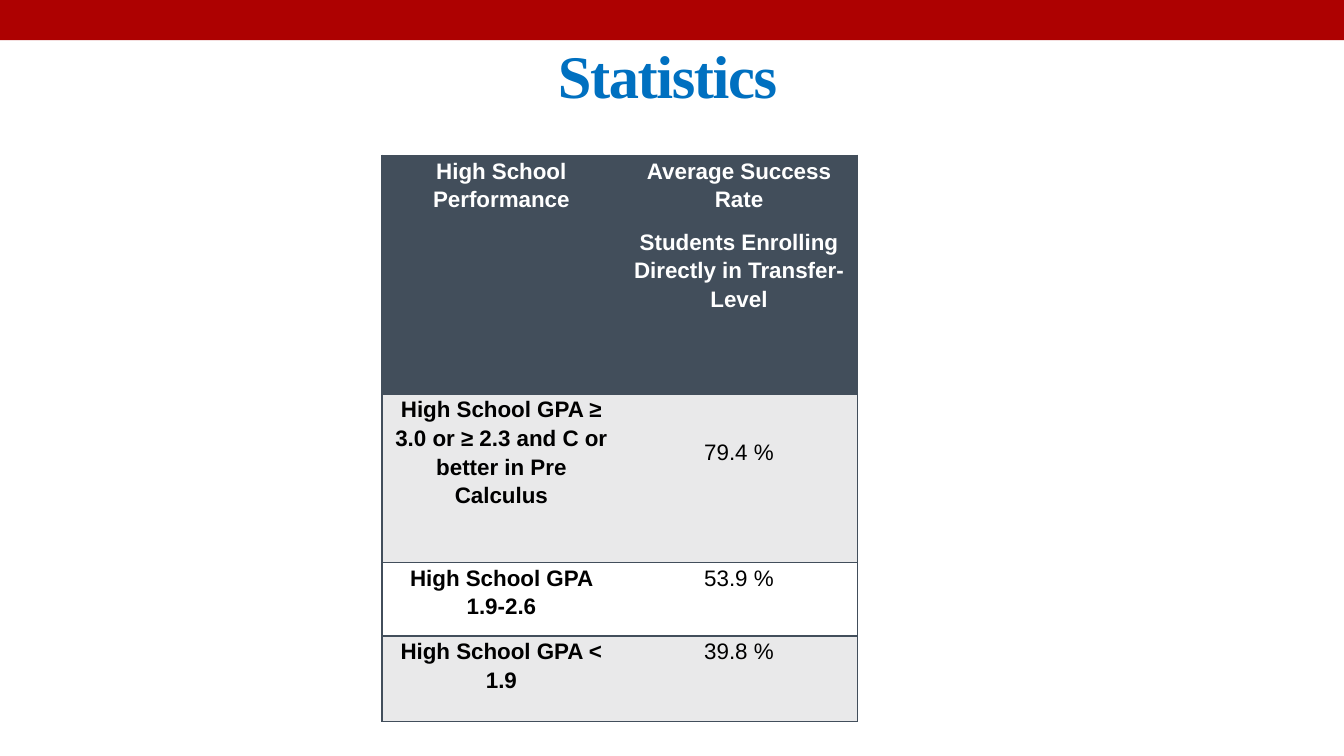
from pptx import Presentation
from pptx.dml.color import RGBColor
from pptx.enum.shapes import MSO_SHAPE
from pptx.enum.text import MSO_ANCHOR, PP_ALIGN
from pptx.oxml import parse_xml
from pptx.oxml.ns import nsdecls
from pptx.util import Pt

THEME = {
    "band": "AD0101", "title": "0070C0", "head": "424E5B",
    "gray": "E9E9EA", "white": "FFFFFF", "black": "000000",
    "serif": "Times New Roman", "sans": "Arial",
    "big": 43.2, "body": 16,
}


def style(par, font, size, color, bold):
    par.alignment = PP_ALIGN.CENTER
    for run in par.runs:
        run.font.name = font
        run.font.size = Pt(size)
        run.font.bold = bold
        run.font.color.rgb = RGBColor.from_string(color)


def border(cell, sides):
    # Edges go ahead of the fill, in schema order
    props = cell._tc.get_or_add_tcPr()
    for spot, side in enumerate("LRTB"):
        paint = "<a:noFill/>"
        if side in sides:
            paint = f'<a:solidFill><a:srgbClr val="{THEME["head"]}"/></a:solidFill>'
        props.insert(spot, parse_xml(
            f'<a:ln{side} {nsdecls("a")} w="{Pt(1)}">{paint}</a:ln{side}>'))


deck = Presentation()
deck.slide_width, deck.slide_height = Pt(960), Pt(540)
slide = deck.slides.add_slide(deck.slide_layouts[6])

# Top band
band = slide.shapes.add_shape(MSO_SHAPE.RECTANGLE, 0, 0, Pt(960), Pt(28.8))
band.shadow.inherit = False
band.fill.solid()
band.fill.fore_color.rgb = RGBColor.from_string(THEME["band"])
band.line.fill.background()

# Title
title = slide.shapes.add_textbox(Pt(66), Pt(28.8), Pt(821.5), Pt(49))
frame = title.text_frame
frame.word_wrap = True
frame.vertical_anchor = MSO_ANCHOR.MIDDLE
frame.text = "Statistics"
style(frame.paragraphs[0], THEME["serif"], THEME["big"], THEME["title"], True)
frame.paragraphs[0].runs[0].font._element.set("spc", "-100")

# Table: row height, fill, texts
rows = [
    (170.6, "head", ["High School Performance",
                     "Average Success Rate\nStudents Enrolling Directly in Transfer-Level"]),
    (120.2, "gray", ["High School GPA ≥ 3.0 or ≥ 2.3 and C or better in Pre Calculus",
                     "79.4 %"]),
    (52.6, "white", ["High School GPA 1.9-2.6", "53.9 %"]),
    (61.2, "gray", ["High School GPA < 1.9", "39.8 %"]),
]
widths = [170.5, 169]
table = slide.shapes.add_table(
    len(rows), len(widths), Pt(272.9), Pt(110.9),
    Pt(sum(widths)), Pt(sum(row[0] for row in rows))).table
table.horz_banding = False
for col, width in enumerate(widths):
    table.columns[col].width = Pt(width)

for num, (height, fill, texts) in enumerate(rows):
    table.rows[num].height = Pt(height)
    for col, text in enumerate(texts):
        cell = table.cell(num, col)
        cell.margin_left = cell.margin_right = Pt(5)
        cell.margin_top = cell.margin_bottom = 0
        cell.fill.solid()
        cell.fill.fore_color.rgb = RGBColor.from_string(THEME[fill])
        border(cell, "TB" + "LR"[col])
        cell.text_frame.text = text
        color = THEME["white" if num == 0 else "black"]
        for par in cell.text_frame.paragraphs:
            style(par, THEME["sans"], THEME["body"], color, num == 0 or col == 0)
            par.line_spacing = 1.15
            par.space_after = Pt(10)

# The first rate sits one line lower in its cell
table.cell(1, 1).margin_top = Pt(30.5)

deck.save("out.pptx")
